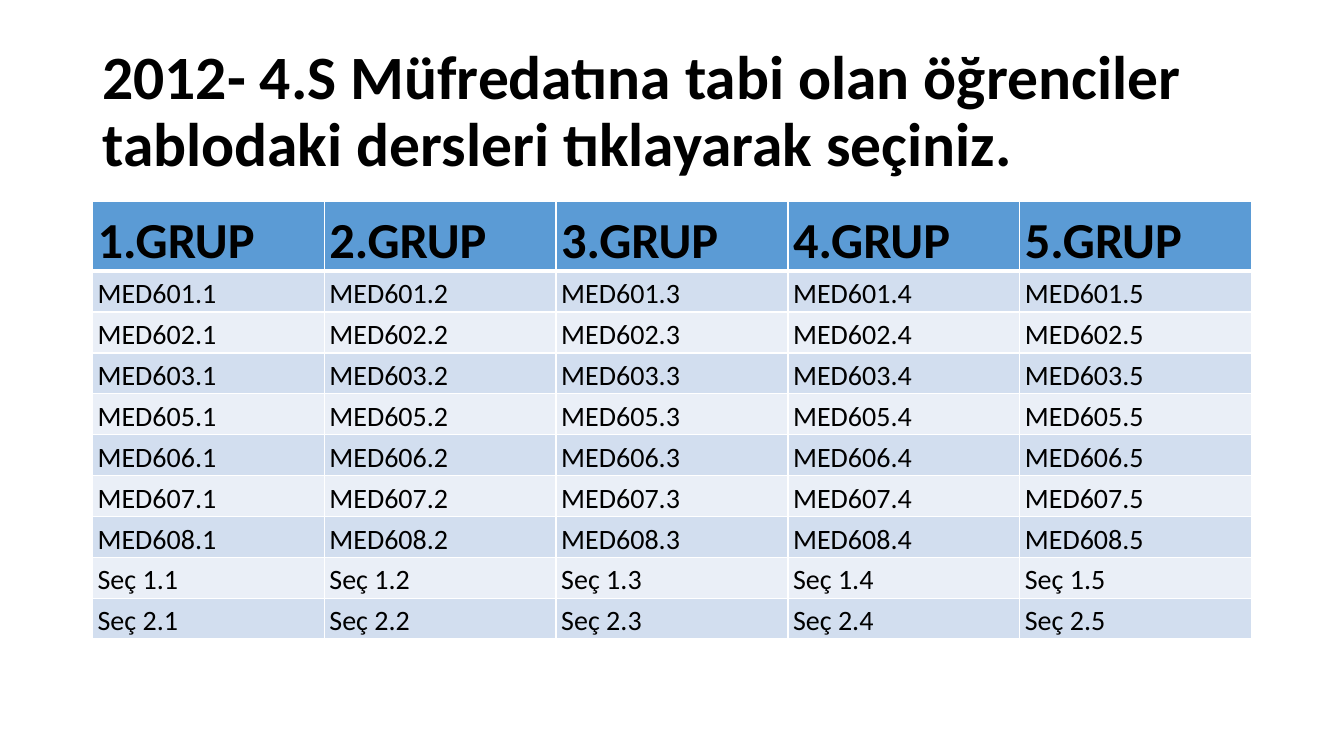
import pptx
import pptx.util
import pptx.dml.color
import pptx.enum.text
import pptx.oxml
import pptx.oxml.ns

Cm = pptx.util.Cm
Pt = pptx.util.Pt
Anchor = pptx.enum.text.MSO_ANCHOR


def color(code):
    return pptx.dml.color.RGBColor.from_string(code)


def style(para, size, bold, space):
    para.line_spacing = space
    for run in para.runs:
        run.font.name = "Calibri"
        run.font.size = Pt(size)
        run.font.bold = bold
        run.font.color.rgb = color("000000")


deck = pptx.Presentation()
deck.slide_width = Cm(33.87)
deck.slide_height = Cm(19.05)
slide = deck.slides.add_slide(deck.slide_layouts[6])

left, width = Cm(2.33), Cm(29.21)

# Title
title = slide.shapes.add_textbox(left, Cm(1.01), width, Cm(3.68)).text_frame
title.word_wrap = True
title.vertical_anchor = Anchor.MIDDLE
title.text = ("2012- 4.S Müfredatına tabi olan öğrenciler\v"
              "tablodaki dersleri tıklayarak seçiniz.")
style(title.paragraphs[0], 44, True, 0.9)

# Course names, one row each, numbered by group
names = ["MED601", "MED602", "MED603", "MED605", "MED606",
         "MED607", "MED608", "Seç 1", "Seç 2"]
groups = range(1, 6)
rows = [[f"{n}.GRUP" for n in groups]]
rows += [[f"{name}.{n}" for n in groups] for name in names]

# Table
high = Cm(1.03)
frame = slide.shapes.add_table(len(rows), len(groups), left, Cm(5.08),
                               width, high * len(rows))
table = frame.table
for row in table.rows:
    row.height = high

for r, texts in enumerate(rows):
    head = r == 0
    fill = "5B9BD5" if head else ("EAEFF7", "D2DEEF")[r % 2]
    for c, text in enumerate(texts):
        cell = table.cell(r, c)
        cell.margin_left = cell.margin_right = Cm(0.13)
        cell.margin_top = cell.margin_bottom = 0
        cell.vertical_anchor = Anchor.BOTTOM if head else Anchor.MIDDLE
        cell.text = text
        style(cell.text_frame.paragraphs[0], 36 if head else 20, head, 1.15)

        # White borders, thick under the header
        props = cell._tc.get_or_add_tcPr()
        for side in "LRTB":
            thick = (r, side) in [(0, "B"), (1, "T")]
            props.append(pptx.oxml.parse_xml(
                f'<a:ln{side} {pptx.oxml.ns.nsdecls("a")} '
                f'w="{Pt(3 if thick else 1)}"><a:solidFill>'
                f'<a:srgbClr val="FFFFFF"/></a:solidFill></a:ln{side}>'))
        cell.fill.solid()
        cell.fill.fore_color.rgb = color(fill)

deck.save("out.pptx")
